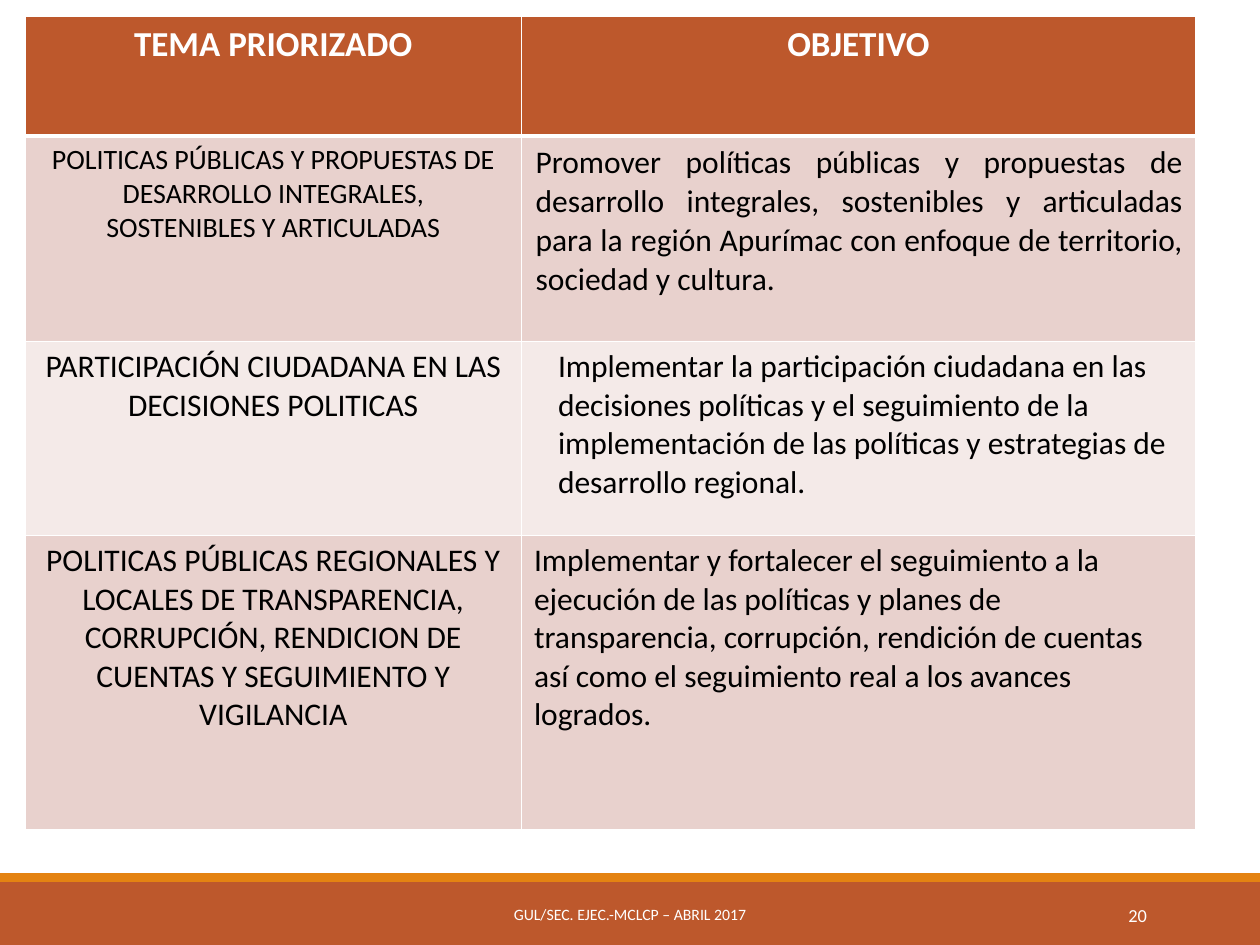
import pptx
import pptx.util
import pptx.dml.color
import pptx.enum.shapes
import pptx.enum.text
import pptx.oxml
import pptx.oxml.ns
import lxml.etree

Pt = pptx.util.Pt
ALIGN = pptx.enum.text.PP_ALIGN

THEME = {
    "font": "Calibri",
    "rust": "BD582C", "orange": "E48312", "white": "FFFFFF", "black": "000000",
    "bands": ("E8D1CD", "F4EAE8"),
    "header": 20, "body": 18, "compact": 16, "number": 10.5, "footer": 9,
}

HEADERS = ("TEMA PRIORIZADO", "OBJETIVO")
ROWS = [
    {"topic": ("POLITICAS PÚBLICAS Y PROPUESTAS DE DESARROLLO INTEGRALES,",
               "SOSTENIBLES Y ARTICULADAS"),
     "topic_size": "compact",
     "goal": "Promover políticas públicas y propuestas de desarrollo integrales, "
             "sostenibles y articuladas para la región Apurímac con enfoque de "
             "territorio, sociedad y cultura.",
     "align": ALIGN.JUSTIFY, "indent": 0.9, "spacing": 1.02},
    {"topic": ("PARTICIPACIÓN CIUDADANA EN LAS DECISIONES POLITICAS",),
     "topic_size": "body",
     "goal": "Implementar la participación ciudadana en las decisiones políticas y "
             "el seguimiento de la implementación de las políticas y estrategias "
             "de desarrollo regional.",
     "align": ALIGN.LEFT, "indent": 13.7, "spacing": None},
    {"topic": ("POLITICAS PÚBLICAS REGIONALES Y LOCALES DE TRANSPARENCIA,",
               "CORRUPCIÓN, RENDICION DE CUENTAS Y SEGUIMIENTO Y VIGILANCIA"),
     "topic_size": "body",
     "goal": "Implementar y fortalecer el seguimiento a la ejecución de las "
             "políticas y planes de transparencia, corrupción, rendición de cuentas "
             "así como el seguimiento real a los avances logrados.",
     "align": ALIGN.LEFT, "indent": 0, "spacing": None},
]
TABLE_LEFT, TABLE_TOP = 14.4, 9.4
COLUMN_WIDTHS = (283.6, 385.2)
ROW_HEIGHTS = (68.4, 117.4, 110.9, 167.8)

BARS = [(504, 36, "rust"), (499, 5, "orange")]
FOOTERS = [
    ("20", 584.6, 77.8, "number", ALIGN.RIGHT),
    ("GUL/SEC. EJEC.-MCLCP – ABRIL 2017", 217.4, 285.1, "footer", ALIGN.CENTER),
]


def color(name):
    return pptx.dml.color.RGBColor.from_string(THEME.get(name, name))


def write(frame, texts, size, ink, align, bold=False, indent=0, spacing=None):
    for index, text in enumerate(texts):
        paragraph = frame.add_paragraph() if index else frame.paragraphs[0]
        paragraph.alignment = align
        if spacing:
            paragraph.line_spacing = spacing
        if indent:
            paragraph._p.get_or_add_pPr().set("marL", str(int(Pt(indent))))
        run = paragraph.add_run()
        run.text = text
        run.font.name = THEME["font"]
        run.font.size = Pt(THEME[size])
        run.font.bold = bold
        run.font.color.rgb = color(ink)


def style_cell(cell, fill, bottom=1, top=1):
    properties = cell._tc.get_or_add_tcPr()
    for side, width in (("L", 1), ("R", 1), ("T", top), ("B", bottom)):
        properties.append(pptx.oxml.parse_xml(
            f'<a:ln{side} {pptx.oxml.ns.nsdecls("a")} w="{int(Pt(width))}">'
            f'<a:solidFill><a:srgbClr val="{THEME["white"]}"/></a:solidFill>'
            f'</a:ln{side}>'))
    cell.fill.solid()
    cell.fill.fore_color.rgb = color(fill)


def add_bar(slide, top, height, fill):
    shape = slide.shapes.add_shape(
        pptx.enum.shapes.MSO_SHAPE.RECTANGLE, 0, Pt(top), Pt(720), Pt(height))
    shape.shadow.inherit = False
    shape.fill.solid()
    shape.fill.fore_color.rgb = color(fill)
    shape.line.fill.background()


def add_footer(slide, text, left, width, size, align):
    box = slide.shapes.add_textbox(Pt(left), Pt(508.3), Pt(width), Pt(28.8))
    box.text_frame.word_wrap = True
    box.text_frame.vertical_anchor = pptx.enum.text.MSO_ANCHOR.MIDDLE
    write(box.text_frame, [text], size, "white", align)


def add_topics_table(slide):
    table = slide.shapes.add_table(
        len(ROW_HEIGHTS), len(COLUMN_WIDTHS), Pt(TABLE_LEFT), Pt(TABLE_TOP),
        Pt(sum(COLUMN_WIDTHS)), Pt(sum(ROW_HEIGHTS))).table
    for column, width in zip(table.columns, COLUMN_WIDTHS):
        column.width = Pt(width)
    for row, height in zip(table.rows, ROW_HEIGHTS):
        row.height = Pt(height)
    for index, header in enumerate(HEADERS):
        cell = table.cell(0, index)
        style_cell(cell, "rust", bottom=3)
        write(cell.text_frame, [header], "header", "white", ALIGN.CENTER, bold=True)
    for index, row in enumerate(ROWS, 1):
        topic, goal = table.cell(index, 0), table.cell(index, 1)
        for cell in (topic, goal):
            style_cell(cell, THEME["bands"][(index - 1) % 2], top=3 if index == 1 else 1)
        write(topic.text_frame, row["topic"], row["topic_size"], "black", ALIGN.CENTER)
        write(goal.text_frame, [row["goal"]], "body", "black", row["align"],
              indent=row["indent"], spacing=row["spacing"])


def main():
    presentation = pptx.Presentation()
    presentation.slide_width, presentation.slide_height = Pt(720), Pt(540)
    slide = presentation.slides.add_slide(presentation.slide_layouts[6])
    for bar in BARS:
        add_bar(slide, *bar)
    add_topics_table(slide)
    for footer in FOOTERS:
        add_footer(slide, *footer)
    presentation.save("out.pptx")


if __name__ == "__main__":
    main()
